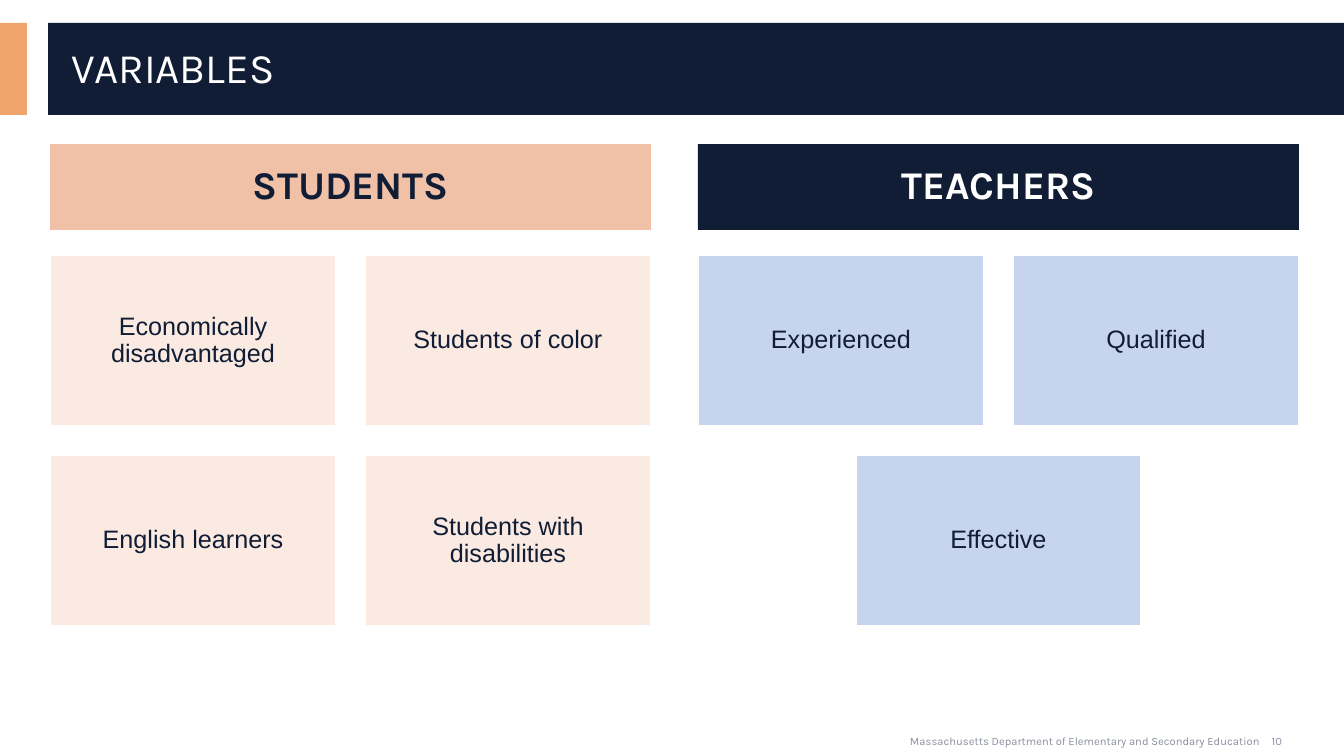
from pptx import Presentation
from pptx.dml.color import RGBColor
from pptx.enum.shapes import MSO_SHAPE
from pptx.enum.text import MSO_ANCHOR, MSO_AUTO_SIZE, PP_ALIGN
from pptx.util import Emu, Pt

NAVY, WHITE, GREY, ORANGE = "101D35", "FFFFFF", "8A8FA0", "F0A36B"
TITLE = "VARIABLES"
FOOTER = "Massachusetts Department of Elementary and Secondary Education"
PAGE = "10"
GROUPS = [
    dict(heading="STUDENTS", left=50, placeholder=1, fill="F0C1A7", ink=NAVY, tile="FAEAE2",
         rows=[["Economically disadvantaged", "Students of color"],
               ["English learners", "Students with disabilities"]]),
    dict(heading="TEACHERS", left=698, placeholder=3, fill=NAVY, ink=WHITE, tile="C6D4EE",
         rows=[["Experienced", "Qualified"], ["Effective"]]),
]
BANDS = [((0, 23, 27, 92), ORANGE), ((48, 23, 1296, 92), "101D34")]
GROUP_WIDTH = 601
HEADING_TOP, HEADING_HEIGHT = 144, 86
TILES_TOP, TILE_WIDTH, TILE_HEIGHT, GAP = 255, 286, 171, 29


def px(length):
    return Emu(round(length * 914400 / 100.8))


def color(value):
    return RGBColor.from_string(value)


def place(shape, left, top, width, height):
    shape.left, shape.top = px(left), px(top)
    shape.width, shape.height = px(width), px(height)


def paint(shape, value):
    shape.fill.solid()
    shape.fill.fore_color.rgb = color(value)


def write(shape, text, size, ink=NAVY, font="Karla", bold=False,
          align=PP_ALIGN.CENTER, anchor=MSO_ANCHOR.MIDDLE, spacing=0.9, inset=(10, 5)):
    frame = shape.text_frame
    frame.text = text
    frame.word_wrap = True
    frame.auto_size = MSO_AUTO_SIZE.NONE
    frame.vertical_anchor = anchor
    frame.margin_left = frame.margin_right = px(inset[0])
    frame.margin_top = frame.margin_bottom = px(inset[1])
    paragraph = frame.paragraphs[0]
    paragraph.alignment = align
    paragraph.line_spacing = spacing
    paragraph.space_before = Pt(0)
    run = paragraph.runs[0].font
    run.name, run.size, run.bold = font, Pt(size), bold
    run.color.rgb = color(ink)


def add_block(slide, box, fill):
    block = slide.shapes.add_shape(MSO_SHAPE.RECTANGLE, *map(px, box))
    block.shadow.inherit = False
    paint(block, fill)
    block.line.fill.background()
    return block


def add_group(slide, group):
    heading = slide.placeholders[group["placeholder"]]
    place(heading, group["left"], HEADING_TOP, GROUP_WIDTH, HEADING_HEIGHT)
    paint(heading, group["fill"])
    write(heading, group["heading"], 28, group["ink"], bold=True)
    for row, labels in enumerate(group["rows"]):
        row_width = len(labels) * (TILE_WIDTH + GAP) - GAP
        start = group["left"] + (GROUP_WIDTH - row_width) / 2
        top = TILES_TOP + row * (TILE_HEIGHT + GAP)
        for column, label in enumerate(labels):
            left = start + column * (TILE_WIDTH + GAP)
            tile = add_block(slide, (left, top, TILE_WIDTH, TILE_HEIGHT), group["tile"])
            tile.line.color.rgb = color(WHITE)
            tile.line.width = Pt(2)
            write(tile, label, 18, font="Arial", inset=(7, 7))


def main():
    deck = Presentation()
    deck.slide_width, deck.slide_height = px(1344), px(756)
    slide = deck.slides.add_slide(deck.slide_layouts.get_by_name("Comparison"))
    for index in (2, 4):
        unused = slide.placeholders[index].element
        unused.getparent().remove(unused)

    for depth, (box, fill) in enumerate(BANDS, start=2):
        band = add_block(slide, box, fill).element
        band.getparent().insert(depth, band)

    title = slide.shapes.title
    place(title, 62, 32, 1260, 75)
    write(title, TITLE, 30, WHITE, align=PP_ALIGN.LEFT)

    for group in GROUPS:
        add_group(slide, group)

    footer = slide.shapes.add_textbox(px(900), px(729), px(402), px(24))
    write(footer, FOOTER, 8, GREY, align=PP_ALIGN.LEFT, anchor=MSO_ANCHOR.TOP, spacing=1.0)
    page = slide.shapes.add_textbox(px(1252), px(721), px(50), px(40))
    write(page, PAGE, 8, GREY, spacing=1.0)
    deck.save("out.pptx")


if __name__ == "__main__":
    main()
